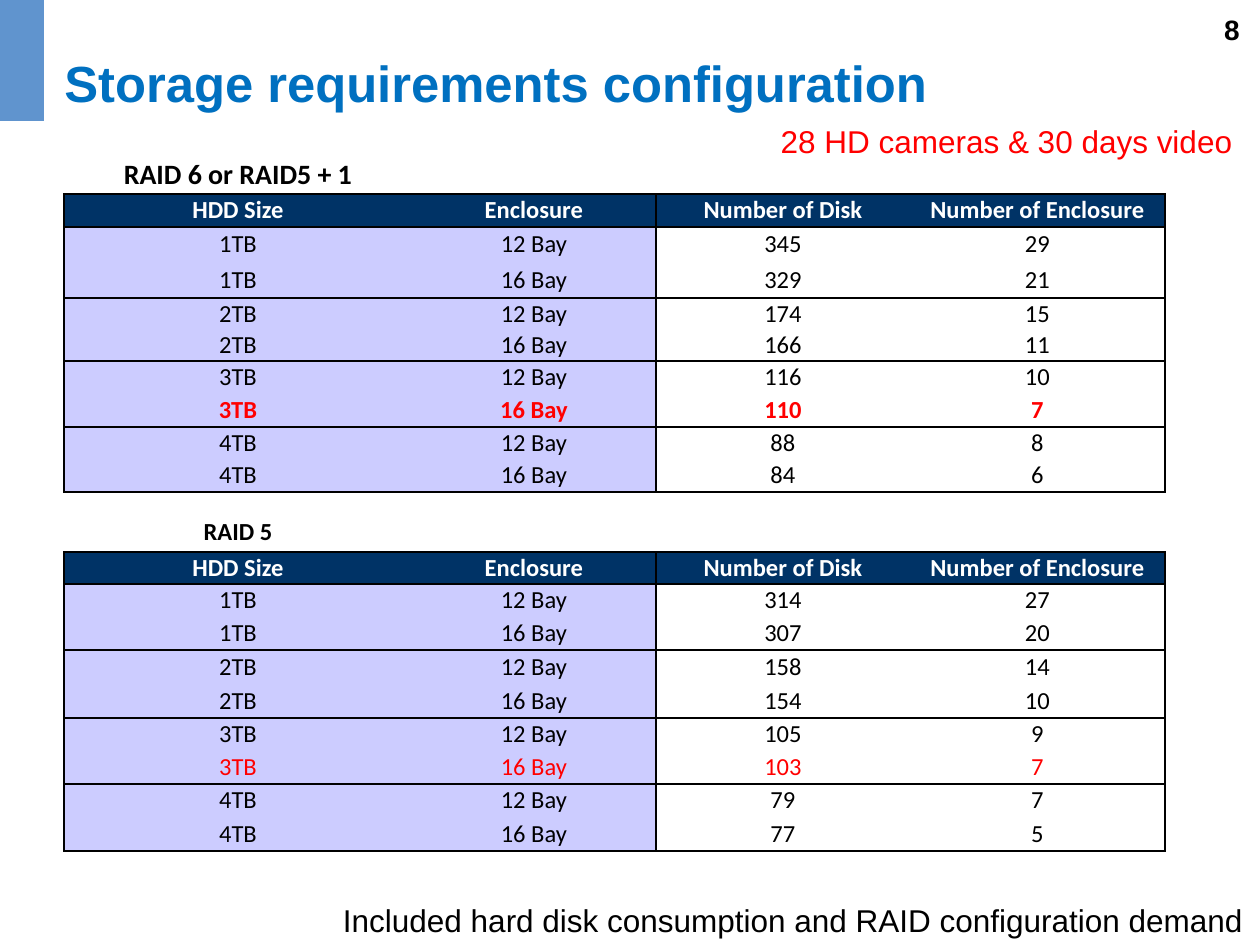
from lxml import etree
from pptx import Presentation
from pptx.dml.color import RGBColor
from pptx.enum.shapes import MSO_SHAPE
from pptx.enum.text import MSO_ANCHOR, PP_ALIGN
from pptx.oxml.ns import qn
from pptx.util import Pt

RECTANGLE = MSO_SHAPE.RECTANGLE
TOP, MIDDLE = MSO_ANCHOR.TOP, MSO_ANCHOR.MIDDLE
LEFT, CENTER, RIGHT = PP_ALIGN.LEFT, PP_ALIGN.CENTER, PP_ALIGN.RIGHT

BLACK = RGBColor(0x00, 0x00, 0x00)
WHITE = RGBColor(0xFF, 0xFF, 0xFF)
RED = RGBColor(0xFF, 0x00, 0x00)
TITLE_BLUE = RGBColor(0x00, 0x70, 0xC0)
ACCENT_BLUE = RGBColor(0x60, 0x94, 0xCE)
HEADER_NAVY = RGBColor(0x00, 0x33, 0x66)
LAVENDER = RGBColor(0xCC, 0xCC, 0xFF)

EMU_PER_PX = 914400 / 126
BORDER_PT = 1

HEADINGS = ("HDD Size", "Enclosure", "Number of Disk", "Number of Enclosure")
HDD_SIZES = ("1TB", "2TB", "3TB", "4TB")
ENCLOSURES = ("12 Bay", "16 Bay")
COLUMN_WIDTHS = (348, 244, 254, 255)
CHOSEN = ("3TB", "16 Bay")

# Disk and enclosure counts, in order of HDD size and then enclosure
RAID6_COUNTS = ((345, 29), (329, 21), (174, 15), (166, 11),
                (116, 10), (110, 7), (88, 8), (84, 6))
RAID5_COUNTS = ((314, 27), (307, 20), (158, 14), (154, 10),
                (105, 9), (103, 7), (79, 7), (77, 5))
RAID6_HEIGHTS = (39, 33, 35, 36, 32, 31, 33, 33, 32, 33)
RAID5_HEIGHTS = (40, 32, 33, 33, 34, 34, 33, 33, 33, 34)


def px(length):
    return round(length * EMU_PER_PX)


def write(frame, text, *, size, color=BLACK, font="Arial", bold=False,
          align=CENTER, line_spacing=None):
    paragraph = frame.paragraphs[0]
    paragraph.alignment = align
    if line_spacing:
        paragraph.line_spacing = line_spacing
    run = paragraph.add_run()
    run.text = text
    run.font.name = font
    run.font.size = Pt(size)
    run.font.bold = bold
    run.font.color.rgb = color


def add_label(slide, text, left, top, width, height, *, wrap=True,
              anchor=TOP, **text_format):
    label = slide.shapes.add_textbox(px(left), px(top), px(width), px(height))
    label.text_frame.word_wrap = wrap
    label.text_frame.vertical_anchor = anchor
    write(label.text_frame, text, **text_format)


def add_accent_bar(slide):
    bar = slide.shapes.add_shape(RECTANGLE, 0, px(-4), px(44), px(125))
    bar.shadow.inherit = False
    bar.fill.solid()
    bar.fill.fore_color.rgb = ACCENT_BLUE
    bar.line.fill.background()


def set_borders(cell, visible):
    properties = cell._tc.get_or_add_tcPr()
    for side in "LRTB":
        line = etree.SubElement(properties, qn(f"a:ln{side}"),
                                w=str(Pt(BORDER_PT)))
        if side in visible:
            fill = etree.SubElement(line, qn("a:solidFill"))
            etree.SubElement(fill, qn("a:srgbClr"), val=str(BLACK))
        else:
            etree.SubElement(line, qn("a:noFill"))


def visible_sides(row, column):
    """Lines close the caption, header and each HDD size, and frame column pairs."""
    sides = ""
    if row > 0:
        sides += "L" if column % 2 == 0 else "R"
    if row == 0 or row % 2 == 1:
        sides += "B"
    if row == 1 or (row > 0 and row % 2 == 0):
        sides += "T"
    return sides


def fill_cell(cell, row, column):
    if row == 1:
        color = HEADER_NAVY
    elif row > 1 and column < 2:
        color = LAVENDER
    else:
        cell.fill.background()
        return
    cell.fill.solid()
    cell.fill.fore_color.rgb = color


def add_raid_table(slide, top, caption, caption_size, counts, heights,
                   chosen_bold):
    options = [(size, bay) for size in HDD_SIZES for bay in ENCLOSURES]
    rows = [(caption, "", "", ""), HEADINGS]
    rows += [option + count for option, count in zip(options, counts)]

    table = slide.shapes.add_table(
        len(rows), len(HEADINGS), px(64), px(top),
        px(sum(COLUMN_WIDTHS)), px(sum(heights))).table
    table.first_row = table.horz_banding = False
    for column, width in zip(table.columns, COLUMN_WIDTHS):
        column.width = px(width)
    for table_row, height in zip(table.rows, heights):
        table_row.height = px(height)

    for r, values in enumerate(rows):
        chosen = values[:2] == CHOSEN
        color = WHITE if r == 1 else RED if chosen else BLACK
        bold = r < 2 or (chosen and chosen_bold)
        for c, value in enumerate(values):
            cell = table.cell(r, c)
            cell.margin_left = cell.margin_right = 0
            cell.margin_top = cell.margin_bottom = 0
            cell.vertical_anchor = MIDDLE
            set_borders(cell, visible_sides(r, c))
            fill_cell(cell, r, c)
            if value != "":
                write(cell.text_frame, str(value), font="Calibri",
                      size=caption_size if r == 0 else 14,
                      color=color, bold=bold)


def main():
    presentation = Presentation()
    presentation.slide_width = px(1260)
    presentation.slide_height = px(945)
    slide = presentation.slides.add_slide(presentation.slide_layouts[6])

    # Page number and title
    add_label(slide, "8", 958, 6, 294, 66, size=16, bold=True, align=RIGHT)
    add_label(slide, "Storage requirements configuration", 52, -3, 1134, 158,
              anchor=MIDDLE, size=29, color=TITLE_BLUE, bold=True,
              align=LEFT, line_spacing=1.2)

    # One table for each RAID level
    add_raid_table(slide, 155, "RAID 6 or RAID5 + 1", 16, RAID6_COUNTS,
                   RAID6_HEIGHTS, chosen_bold=True)
    add_raid_table(slide, 512, "RAID 5", 14, RAID5_COUNTS,
                   RAID5_HEIGHTS, chosen_bold=False)

    # Footnote, accent bar and scenario
    add_label(slide, "Included hard disk consumption and RAID configuration demand",
              326, 895, 934, 50, wrap=False, size=18)
    add_accent_bar(slide)
    add_label(slide, "28 HD cameras & 30 days video", 766, 116, 481, 50,
              wrap=False, size=18, color=RED)

    presentation.save("out.pptx")


if __name__ == "__main__":
    main()
